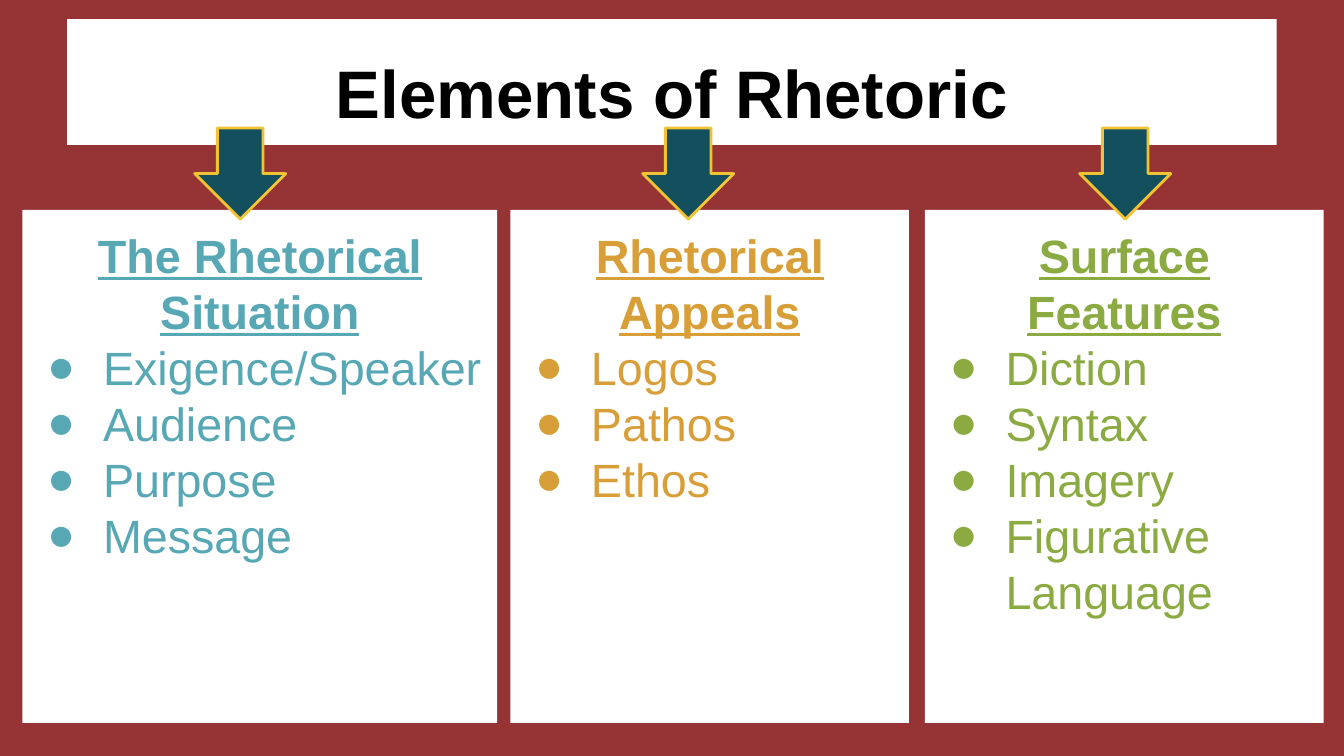
import pptx
import pptx.dml.color
import pptx.enum.shapes
import pptx.enum.text
import pptx.oxml
import pptx.oxml.ns
import pptx.util

Pt = pptx.util.Pt
ALIGN = pptx.enum.text.PP_ALIGN
ANCHOR = pptx.enum.text.MSO_ANCHOR


def color(value):
    return pptx.dml.color.RGBColor.from_string(value)


class SlideBuilder:
    font = "Arial"
    inset = 7.2
    panel_top, panel_height = 112.4, 274.9

    def __init__(self, page, background):
        self.page = page
        page.background.fill.solid()
        page.background.fill.fore_color.rgb = color(background)

    def place(self, box, left, top, width, height, anchor, top_inset=inset):
        box.left, box.top, box.width, box.height = map(Pt, (left, top, width, height))
        box.fill.solid()
        box.fill.fore_color.rgb = color("FFFFFF")
        frame = box.text_frame
        frame.word_wrap = True
        frame.auto_size = pptx.enum.text.MSO_AUTO_SIZE.NONE
        frame.vertical_anchor = anchor
        frame.margin_left = frame.margin_right = frame.margin_bottom = Pt(self.inset)
        frame.margin_top = Pt(top_inset)
        return frame

    def style_text(self, para, text, size, ink, bold, align):
        para.text = text
        para.alignment = align
        para.space_before = para.space_after = Pt(0)
        para.font.name = self.font
        para.font.size = Pt(size)
        para.font.bold = bold
        para.font.color.rgb = color(ink)

    def bullet(self, para, ink, symbol="●"):
        properties = para._p.get_or_add_pPr()
        properties.set("marL", str(Pt(36)))
        properties.set("indent", str(-Pt(30)))
        namespace = pptx.oxml.ns.nsdecls("a")
        markups = (
            f'<a:buClr {namespace}><a:srgbClr val="{ink}"/></a:buClr>',
            f'<a:buFont {namespace} typeface="{self.font}"/>',
            f'<a:buChar {namespace} char="{symbol}"/>',
        )
        for position, markup in enumerate(markups, len(properties) - 1):
            properties.insert(position, pptx.oxml.parse_xml(markup))

    def plain(self, para):
        properties = para._p.get_or_add_pPr()
        properties.set("marL", "0")
        properties.set("indent", "0")
        markup = f'<a:buNone {pptx.oxml.ns.nsdecls("a")}/>'
        properties.insert(len(properties) - 1, pptx.oxml.parse_xml(markup))

    def title(self, text):
        frame = self.place(self.page.shapes.title, 36, 10.2, 648, 67.5, ANCHOR.BOTTOM)
        self.style_text(frame.paragraphs[0], text, 36, "000000", True, ALIGN.CENTER)

    def panel(self, box, left, width, ink, heading, items):
        frame = self.place(box, left, self.panel_top, width, self.panel_height,
                           ANCHOR.TOP, 9)
        para = frame.paragraphs[0]
        self.style_text(para, heading, 25, ink, True, ALIGN.CENTER)
        para.font.underline = True
        para.line_spacing = Pt(30)
        self.plain(para)
        for item in items:
            para = frame.add_paragraph()
            self.style_text(para, item, 25, ink, False, ALIGN.LEFT)
            para.line_spacing = Pt(30)
            self.bullet(para, ink)

    def arrow(self, left):
        shape = self.page.shapes.add_shape(
            pptx.enum.shapes.MSO_SHAPE.DOWN_ARROW, Pt(left), Pt(68.6), Pt(48.8), Pt(48.8))
        shape.shadow.inherit = False
        shape.fill.solid()
        shape.fill.fore_color.rgb = color("134F5C")
        shape.line.color.rgb = color("F1C232")
        shape.line.width = Pt(1.5)


PANELS = [
    (12, 254.4, "57A7B5", "The Rhetorical Situation",
     ["Exigence/Speaker", "Audience", "Purpose", "Message"]),
    (273.4, 213.6, "D89F39", "Rhetorical Appeals", ["Logos", "Pathos", "Ethos"]),
    (495.5, 213.6, "8BAB42", "Surface Features",
     ["Diction", "Syntax", "Imagery", "Figurative Language"]),
]
ARROW_LEFTS = [104.3, 344.3, 578.4]


def main():
    deck = pptx.Presentation()
    deck.slide_width, deck.slide_height = Pt(720), Pt(405)
    page = deck.slides.add_slide(deck.slide_layouts.get_by_name("Comparison"))
    builder = SlideBuilder(page, "963334")
    builder.title("Elements of Rhetoric")
    bodies = [box for box in page.placeholders if box.placeholder_format.idx in (1, 2, 3)]
    for box, panel in zip(bodies, PANELS):
        builder.panel(box, *panel)
    for left in ARROW_LEFTS:
        builder.arrow(left)
    for box in list(page.placeholders):
        if not box.text_frame.text:
            box.element.getparent().remove(box.element)
    deck.save("out.pptx")


if __name__ == "__main__":
    main()
